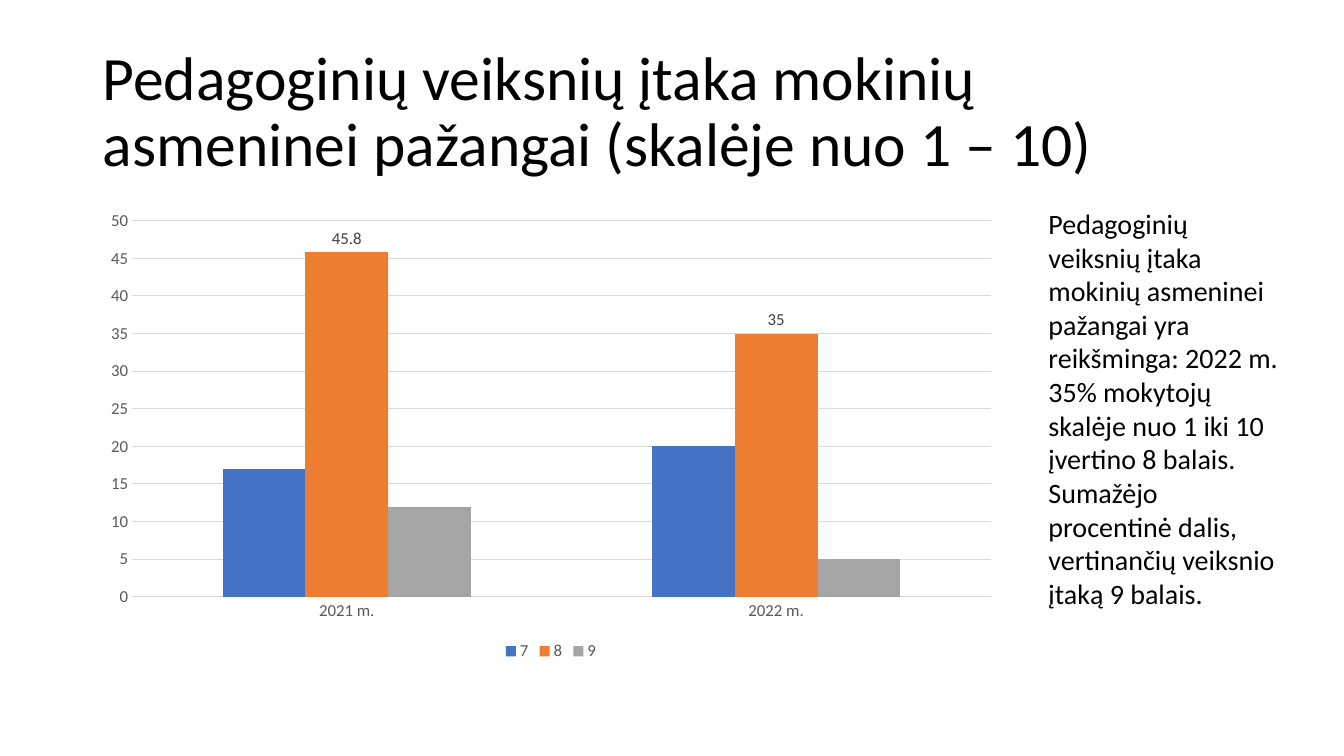
"""Builds a slide with a clustered column chart on teaching factors and a commentary."""
from pptx import Presentation
from pptx.chart.data import CategoryChartData
from pptx.dml.color import RGBColor
from pptx.enum.chart import XL_CHART_TYPE, XL_LABEL_POSITION, XL_LEGEND_POSITION, XL_TICK_MARK
from pptx.enum.lang import MSO_LANGUAGE_ID
from pptx.enum.text import MSO_ANCHOR
from pptx.util import Inches, Pt


def style_font(font, size, color):
    font.name = "Calibri"
    font.size = Pt(size)
    font.color.rgb = RGBColor.from_string(color)


def add_text(box, paragraphs, size, anchor, spacing):
    frame = slide.shapes.add_textbox(*map(Inches, box)).text_frame
    frame.word_wrap = True
    frame.vertical_anchor = anchor
    for index, words in enumerate(paragraphs):
        paragraph = frame.paragraphs[0] if index == 0 else frame.add_paragraph()
        paragraph.line_spacing = spacing
        run = paragraph.add_run()
        run.text = words
        run.font.language_id = MSO_LANGUAGE_ID.LITHUANIAN
        style_font(run.font, size, "000000")


presentation = Presentation()
presentation.slide_width = Inches(13.33)
presentation.slide_height = Inches(7.5)
slide = presentation.slides.add_slide(presentation.slide_layouts[6])

left_margin, content_top = 0.92, 2

add_text((left_margin, 0.4, 11.5, 1.45),
         ["Pedagoginių veiksnių įtaka mokinių asmeninei pažangai (skalėje nuo 1 – 10)"],
         44, MSO_ANCHOR.MIDDLE, 0.9)

ratings = [
    ("7", (17, 20), "4472C4"),
    ("8", (45.8, 35), "ED7D31"),
    ("9", (12, 5), "A5A5A5"),
]
rating_data = CategoryChartData()
rating_data.categories = ["2021 m.", "2022 m."]
for rating, shares, color in ratings:
    rating_data.add_series(rating, shares)

chart = slide.shapes.add_chart(
    XL_CHART_TYPE.COLUMN_CLUSTERED,
    *map(Inches, (left_margin, content_top, 9.09, 4.6)), rating_data).chart
chart.has_title = False
style_font(chart.font, 10, "000000")

columns = chart.plots[0]
columns.gap_width = 219
columns.vary_by_categories = False
for series, (rating, shares, color) in zip(columns.series, ratings):
    series.format.fill.solid()
    series.format.fill.fore_color.rgb = RGBColor.from_string(color)
    series.invert_if_negative = False

top_rating_labels = columns.series[1].data_labels
top_rating_labels.show_value = True
top_rating_labels.position = XL_LABEL_POSITION.OUTSIDE_END
style_font(top_rating_labels.font, 12, "404040")

year_axis, share_axis = chart.category_axis, chart.value_axis
for axis in (year_axis, share_axis):
    axis.major_tick_mark = XL_TICK_MARK.NONE
    axis.minor_tick_mark = XL_TICK_MARK.NONE
    style_font(axis.tick_labels.font, 12, "595959")
share_axis.minimum_scale = 0
share_axis.maximum_scale = 50
share_axis.major_unit = 5
share_axis.has_major_gridlines = True
share_axis.format.line.fill.background()
for line in (year_axis.format.line, share_axis.major_gridlines.format.line):
    line.width = Pt(0.75)
    line.color.rgb = RGBColor.from_string("D9D9D9")

chart.has_legend = True
chart.legend.position = XL_LEGEND_POSITION.BOTTOM
chart.legend.include_in_layout = False
style_font(chart.legend.font, 12, "595959")

add_text((10.3, content_top, 2.49, 4.14),
         ["Pedagoginių veiksnių įtaka mokinių asmeninei pažangai yra reikšminga: 2022 m.",
          "35% mokytojų skalėje nuo 1 iki 10 įvertino 8 balais. "
          "Sumažėjo procentinė dalis, vertinančių veiksnio įtaką 9 balais."],
         20, MSO_ANCHOR.TOP, 1.0)

presentation.save("out.pptx")
